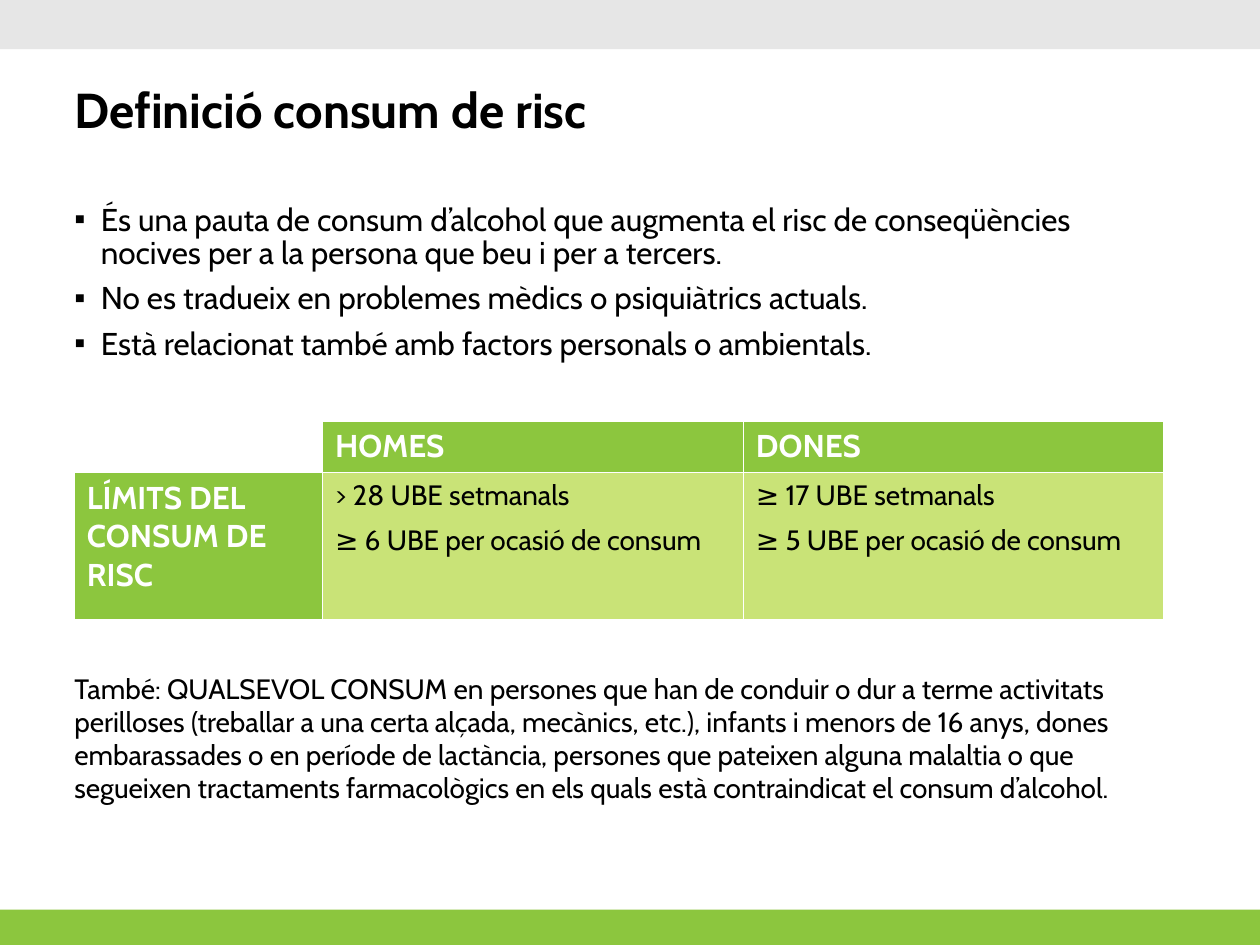
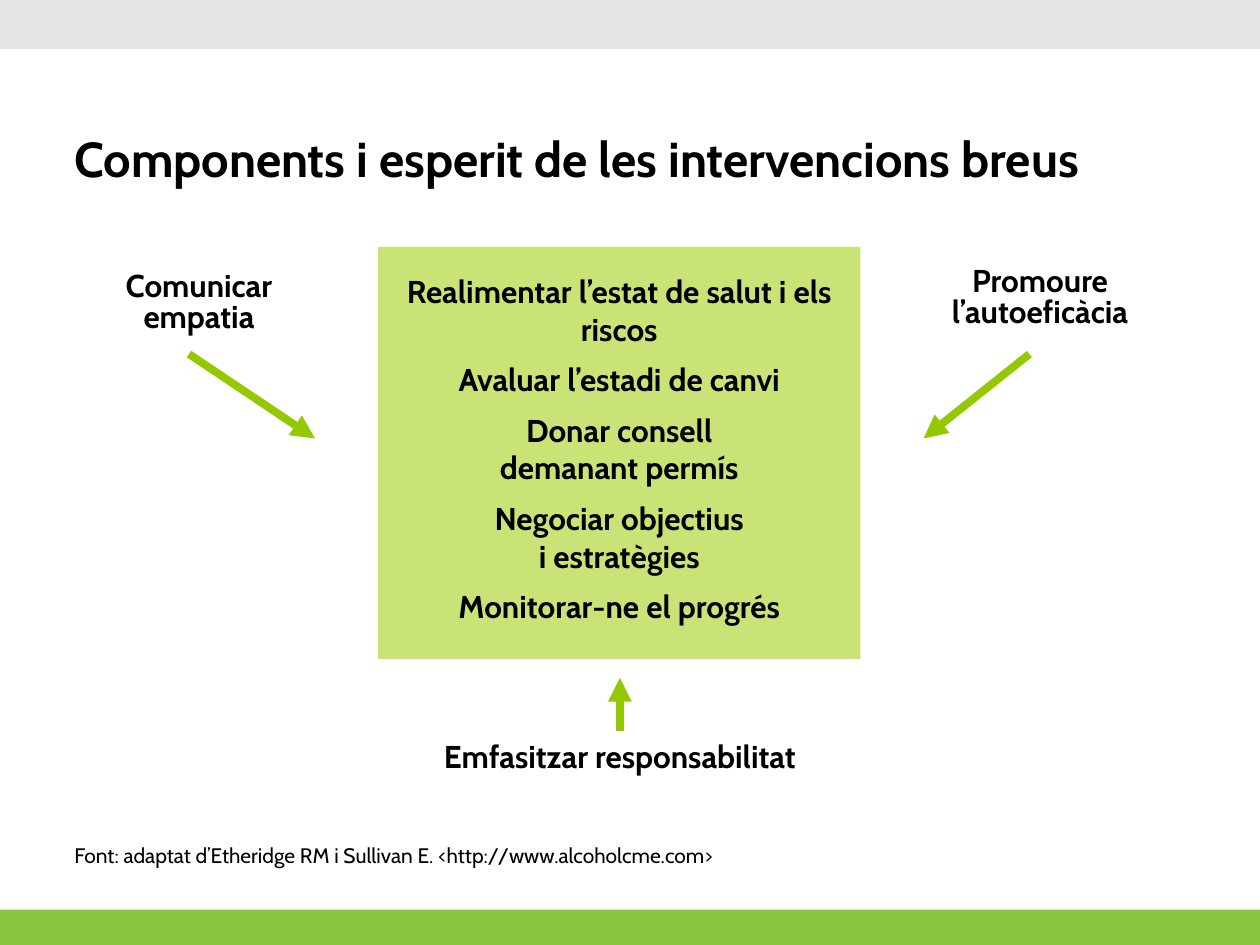
from dataclasses import dataclass, field
from typing import Optional

from lxml.etree import SubElement
from pptx import Presentation
from pptx.dml.color import RGBColor
from pptx.enum.shapes import MSO_CONNECTOR, MSO_SHAPE
from pptx.enum.text import MSO_ANCHOR, MSO_AUTO_SIZE, PP_ALIGN
from pptx.oxml.ns import qn
from pptx.util import Inches, Pt


@dataclass(frozen=True)
class Theme:
    font: str = "Cabin"
    black: RGBColor = RGBColor(0x00, 0x00, 0x00)
    white: RGBColor = RGBColor(0xFF, 0xFF, 0xFF)
    green: RGBColor = RGBColor(0x8C, 0xC6, 0x3E)
    pale_green: RGBColor = RGBColor(0xC9, 0xE3, 0x77)
    arrow_green: RGBColor = RGBColor(0x94, 0xC8, 0x00)
    grey: RGBColor = RGBColor(0xE6, 0xE6, 0xE6)
    title_size: Pt = Pt(28)
    text_size: Pt = Pt(18)
    small_size: Pt = Pt(16)
    source_size: Pt = Pt(12)
    arrow_width: Pt = Pt(4.5)


THEME = Theme()
LEFT = 0.59


@dataclass(frozen=True)
class Box:
    left: float
    top: float
    width: float
    height: float

    def lengths(self) -> tuple:
        return tuple(Inches(n) for n in (self.left, self.top, self.width, self.height))


@dataclass(frozen=True)
class TextStyle:
    size: Pt = THEME.text_size
    bold: bool = False
    color: RGBColor = THEME.black
    layout: dict = field(default_factory=dict)
    gap_before: Pt = Pt(0)
    bullet: Optional[str] = None


@dataclass(frozen=True)
class Band:
    box: Box
    color: RGBColor


@dataclass(frozen=True)
class Label:
    box: Box
    lines: tuple
    style: TextStyle


@dataclass(frozen=True)
class Arrow:
    start: tuple
    end: tuple


# Text styles
LIST_SPACING = {"line_spacing": Pt(19), "space_after": Pt(7)}
CENTERED = {"alignment": PP_ALIGN.CENTER}
TITLE = TextStyle(THEME.title_size, True,
                  layout={"line_spacing": Pt(28), "alignment": PP_ALIGN.LEFT})
LIST = TextStyle(layout=LIST_SPACING, bullet="▪")
NOTE = TextStyle(THEME.small_size, layout=LIST_SPACING)
HEADER = TextStyle(bold=True, color=THEME.white)
CALLOUT = TextStyle(bold=True, gap_before=Pt(3.6),
                    layout=CENTERED | {"line_spacing": 0.5, "space_after": Pt(3.6)})
STEP = TextStyle(bold=True, layout=CENTERED)
SOURCE = TextStyle(THEME.source_size)

BANDS = (
    Band(Box(0, 7.22, 10, 0.28), THEME.green),
    Band(Box(0, 0, 10, 0.39), THEME.grey),
)

# Wording
DEFINITION = (
    "És una pauta de consum d’alcohol que augmenta el risc de conseqüències "
    "nocives per a la persona que beu i per a tercers.",
    "No es tradueix en problemes mèdics o psiquiàtrics actuals.",
    "Està relacionat també amb factors personals o ambientals.",
)
LIMITS = (
    ((), ("HOMES",), ("DONES",)),
    (
        ("LÍMITS DEL CONSUM DE RISC",),
        ("> 28 UBE setmanals", "≥ 6 UBE per ocasió de consum"),
        ("≥ 17 UBE setmanals", "≥ 5 UBE per ocasió de consum"),
    ),
)
ANY_USE = (
    "També: QUALSEVOL CONSUM en persones que han de conduir o dur a terme activitats "
    "perilloses (treballar a una certa alçada, mecànics, etc.), infants i menors de 16 "
    "anys, dones embarassades o en període de lactància, persones que pateixen alguna "
    "malaltia o que segueixen tractaments farmacològics en els quals està contraindicat "
    "el consum d’alcohol."
)
STEPS = (
    ("Realimentar l’estat de salut i els riscos",),
    ("Avaluar l’estadi de canvi",),
    ("Donar consell", "demanant permís"),
    ("Negociar objectius", "i estratègies"),
    ("Monitorar-ne el progrés",),
)
CITATION = "Font: adaptat d’Etheridge RM i Sullivan E. <http://www.alcoholcme.com>"


# Text helpers
def apply_format(target, values: dict) -> None:
    for name, value in values.items():
        setattr(target, name, value)


def set_bullet(paragraph, character: str) -> None:
    properties = paragraph._p.get_or_add_pPr()
    properties.set("marL", str(Inches(0.21)))
    properties.set("indent", str(-Inches(0.21)))
    SubElement(properties, qn("a:buChar"), char=character)


def write(frame, lines: tuple, style: TextStyle) -> None:
    for index, line in enumerate(lines):
        paragraph = frame.add_paragraph() if index else frame.paragraphs[0]
        paragraph.add_run().text = line
        if style.bullet:
            set_bullet(paragraph, style.bullet)
        before = style.gap_before if index else Pt(0)
        apply_format(paragraph, {"space_before": before} | style.layout)
        font = paragraph.runs[0].font
        apply_format(font, {"name": THEME.font, "size": style.size, "bold": style.bold})
        font.color.rgb = style.color


def prepare_frame(frame, margin: float = 0, anchor=MSO_ANCHOR.TOP) -> None:
    sides = ("left", "right", "top", "bottom")
    apply_format(frame, {f"margin_{side}": Inches(margin) for side in sides})
    apply_format(frame, {"word_wrap": True, "auto_size": MSO_AUTO_SIZE.NONE,
                         "vertical_anchor": anchor})


def place(shape, box: Box) -> None:
    apply_format(shape, dict(zip(("left", "top", "width", "height"), box.lengths())))


# Drawing helpers
def add_rectangle(slide, box: Box, color: RGBColor):
    shape = slide.shapes.add_shape(MSO_SHAPE.RECTANGLE, *box.lengths())
    shape.shadow.inherit = False
    shape.fill.solid()
    shape.fill.fore_color.rgb = color
    shape.line.fill.background()
    return shape


def add_text(slide, box: Box, lines: tuple, style: TextStyle) -> None:
    frame = slide.shapes.add_textbox(*box.lengths()).text_frame
    prepare_frame(frame)
    write(frame, lines, style)


def add_label(slide, label: Label):
    shape = slide.shapes.add_textbox(*label.box.lengths())
    shape.text_frame.word_wrap = True
    write(shape.text_frame, label.lines, label.style)
    return shape


def add_arrow(slide, arrow: Arrow):
    points = (Inches(n) for n in arrow.start + arrow.end)
    connector = slide.shapes.add_connector(MSO_CONNECTOR.STRAIGHT, *points)
    connector.line.width = THEME.arrow_width
    connector.line.color.rgb = THEME.arrow_green
    SubElement(connector.line._get_or_add_ln(), qn("a:tailEnd"), type="triangle")
    SubElement(connector._element.spPr, qn("a:effectLst"))
    return connector


def add_borders(cell) -> None:
    properties = cell._tc.get_or_add_tcPr()
    for index, side in enumerate(("lnL", "lnR", "lnT", "lnB")):
        line = properties.makeelement(qn(f"a:{side}"), {"w": str(Pt(1))})
        fill = SubElement(line, qn("a:solidFill"))
        SubElement(fill, qn("a:srgbClr"), val=str(THEME.white))
        properties.insert(index, line)


def add_limits_table(slide) -> None:
    box = Box(LEFT, 3.34, 8.65, 1.58)
    table = slide.shapes.add_table(2, 3, *box.lengths()).table
    for column, width in zip(table.columns, (1.97, 3.34, 3.34)):
        column.width = Inches(width)
    for row, height in zip(table.rows, (0.41, 1.17)):
        row.height = Inches(height)
    for row_index, row in enumerate(LIMITS):
        for column_index, lines in enumerate(row):
            cell = table.cell(row_index, column_index)
            is_header = row_index == 0 or column_index == 0
            if lines:
                cell.fill.solid()
                cell.fill.fore_color.rgb = THEME.green if is_header else THEME.pale_green
                write(cell.text_frame, lines, HEADER if is_header else NOTE)
            else:
                cell.fill.background()
            add_borders(cell)


def add_slide(presentation, layout_index: int, title: str, anchor=MSO_ANCHOR.TOP):
    slide = presentation.slides.add_slide(presentation.slide_layouts[layout_index])
    for band in BANDS:
        add_rectangle(slide, band.box, band.color)
    place(slide.shapes.title, Box(LEFT, 0.71, 8.91, 0.78))
    prepare_frame(slide.shapes.title.text_frame, anchor=anchor)
    write(slide.shapes.title.text_frame, (title,), TITLE)
    return slide


# Slides
def build_definition(presentation) -> None:
    slide = add_slide(presentation, 1, "Definició consum de risc")
    body = slide.placeholders[1]
    place(body, Box(LEFT, 1.62, 8.67, 1.5))
    prepare_frame(body.text_frame)
    write(body.text_frame, DEFINITION, LIST)
    add_text(slide, Box(LEFT, 5.33, 8.67, 1.42), (ANY_USE,), NOTE)
    add_limits_table(slide)


def build_components(presentation) -> None:
    slide = add_slide(presentation, 5, "Components i esperit de les intervencions breus",
                      MSO_ANCHOR.BOTTOM)

    # Central box: each step is set apart from the one above
    steps_box = add_rectangle(slide, Box(3, 1.96, 3.83, 3.27), THEME.pale_green)
    frame = steps_box.text_frame
    prepare_frame(frame, 0.2)
    write(frame, tuple(line for step in STEPS for line in step), STEP)
    first_line = 0
    for step in STEPS:
        if first_line:
            frame.paragraphs[first_line].space_before = Pt(7.2)
        first_line += len(step)

    # Attitudes around the box
    for label in (
        Label(Box(0.58, 2.19, 2, 0.58), ("Comunicar", "empatia"), CALLOUT),
        Label(Box(7.17, 2.15, 2.17, 0.58), ("Promoure", "l’autoeficàcia"), CALLOUT),
    ):
        add_label(slide, label)
    responsibility = add_label(slide, Label(
        Box(3.08, 5.8, 3.68, 0.45), ("Emfasitzar responsabilitat",), STEP))

    add_arrow(slide, Arrow((1.5, 2.81), (2.5, 3.48)))
    add_arrow(slide, Arrow((8.17, 2.81), (7.33, 3.48)))
    upward = add_arrow(slide, Arrow((4.92, 5.8), (4.92, 5.38)))
    upward.begin_connect(responsibility, 0)

    add_text(slide, Box(LEFT, 6.69, 7.91, 0.24), (CITATION,), SOURCE)


def main() -> None:
    presentation = Presentation()
    presentation.slide_width = Inches(10)
    presentation.slide_height = Inches(7.5)
    build_definition(presentation)
    build_components(presentation)
    presentation.save("out.pptx")


if __name__ == "__main__":
    main()
